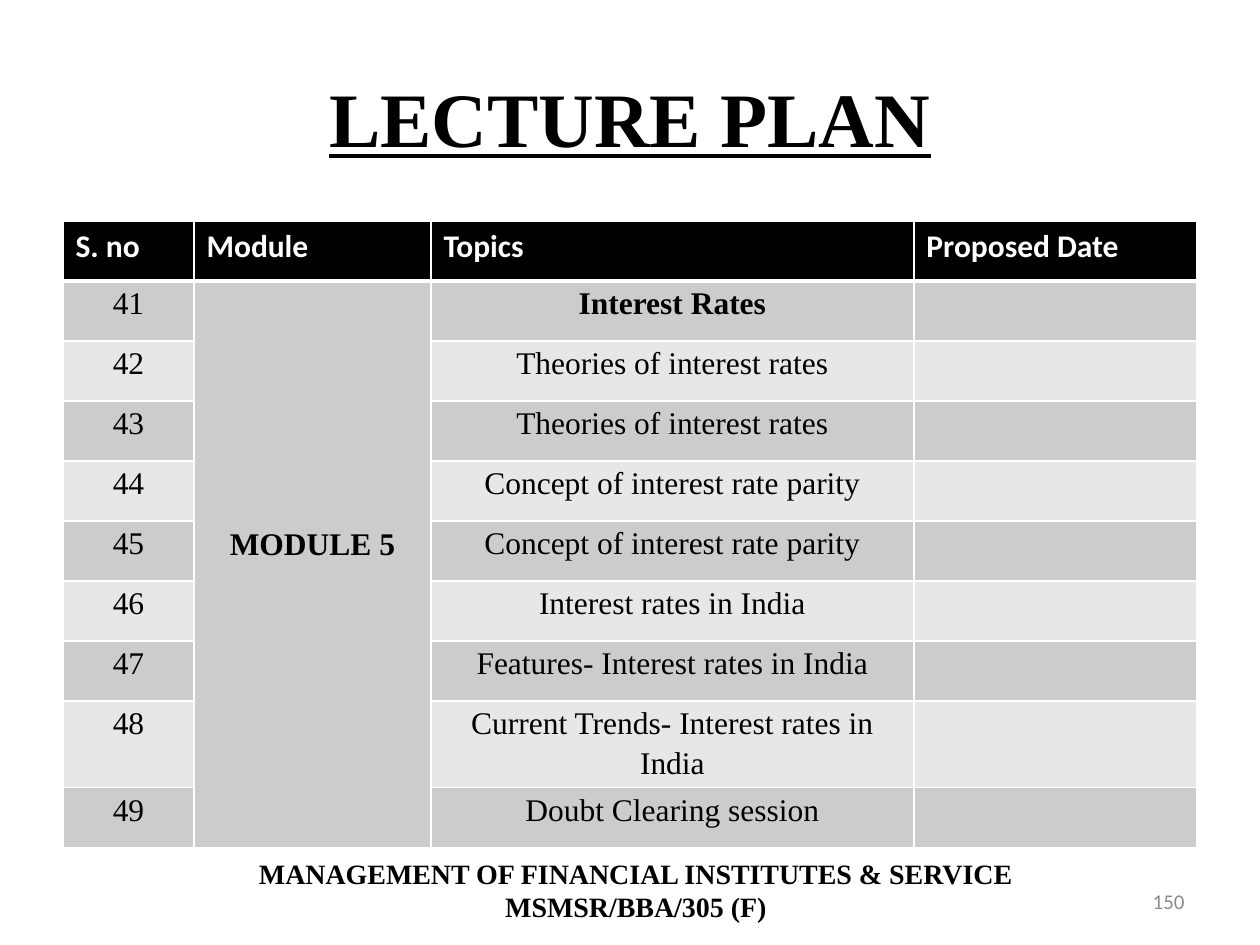
import pptx
import pptx.dml.color
import pptx.enum.text
import pptx.oxml
import pptx.oxml.ns
import pptx.util

PX = 914400 // 126
RGB = pptx.dml.color.RGBColor.from_string
ALIGN = pptx.enum.text.PP_ALIGN
ANCHOR = pptx.enum.text.MSO_ANCHOR

THEME = {
    "serif": "Times New Roman", "sans": "Calibri",
    "ink": "000000", "paper": "FFFFFF", "muted": "8C8C8C",
    "bands": ("CCCCCC", "E7E7E7"),
    "title": 44, "body": 18, "footer": 16, "number": 12,
}


def write(p, text, size, font, color="ink", bold=False):
    """Add one styled run to a paragraph and return it."""
    r = p.add_run()
    r.text = text
    r.font.size = pptx.util.Pt(THEME[size])
    r.font.name = THEME[font]
    r.font.color.rgb = RGB(THEME[color])
    r.font.bold = bold
    return r


def finish_cell(cell, fill, top=1, bottom=1):
    """Draw the cell's borders, widths in points, and fill it."""
    tcPr = cell._tc.get_or_add_tcPr()
    for side, width in (("L", 1), ("R", 1), ("T", top), ("B", bottom)):
        tcPr.append(pptx.oxml.parse_xml(
            f'<a:ln{side} {pptx.oxml.ns.nsdecls("a")} w="{width * 12700}">'
            f'<a:solidFill><a:srgbClr val="{THEME["paper"]}"/></a:solidFill></a:ln{side}>'))
    cell.fill.solid()
    cell.fill.fore_color.rgb = RGB(fill)


prs = pptx.Presentation()
prs.slide_width, prs.slide_height = 1260 * PX, 945 * PX
s = prs.slides.add_slide(prs.slide_layouts[6])

# Text boxes: title, footer, slide number
boxes = [
    ((63, 38, 1134, 157), ANCHOR.MIDDLE, ALIGN.CENTER,
     ["LECTURE PLAN"], ("title", "serif", "ink", True)),
    ((106, 850, 1060, 81), ANCHOR.TOP, ALIGN.CENTER,
     ["MANAGEMENT OF FINANCIAL INSTITUTES & SERVICE", "MSMSR/BBA/305 (F)"],
     ("footer", "serif", "ink", True)),
    ((903, 876, 294, 50), ANCHOR.MIDDLE, ALIGN.RIGHT,
     ["150"], ("number", "sans", "muted")),
]
for place, anchor, align, lines, style in boxes:
    sp = s.shapes.add_textbox(*(v * PX for v in place))
    tf = sp.text_frame
    tf.word_wrap = True
    tf.vertical_anchor = anchor
    p = tf.paragraphs[0]
    p.alignment = align
    for i, line in enumerate(lines):
        if i:
            p.add_line_break()
        r = write(p, line, *style)
        r.font.underline = style[0] == "title"

# Lecture table
headers = ["S. no", "Module", "Topics", "Proposed Date"]
widths = [131, 237, 483, 283]
first_number = 41
topics = [
    "Interest Rates",
    "Theories of interest rates",
    "Theories of interest rates",
    "Concept of interest rate parity",
    "Concept of interest rate parity",
    "Interest rates in India",
    "Features- Interest rates in India",
    "Current Trends- Interest rates in India",
    "Doubt Clearing session",
]
row_height = 60
n_rows = len(topics) + 1
table = s.shapes.add_table(n_rows, len(headers), 63 * PX, 221 * PX,
                           sum(widths) * PX, n_rows * row_height * PX).table
for column, width in zip(table.columns, widths):
    column.width = width * PX
for row in table.rows:
    row.height = row_height * PX

for c, header in enumerate(headers):
    cell = table.cell(0, c)
    write(cell.text_frame.paragraphs[0], header, "body", "sans", "paper", True)
    finish_cell(cell, THEME["ink"], bottom=3)

table.cell(1, 1).merge(table.cell(len(topics), 1))
for i, topic in enumerate(topics):
    module = "MODULE 5" if i == 0 else ""
    for c, text in enumerate([str(first_number + i), module, topic, ""]):
        cell = table.cell(i + 1, c)
        if text:
            cell.margin_left = cell.margin_right = 9 * PX
            cell.margin_top = cell.margin_bottom = 0
            p = cell.text_frame.paragraphs[0]
            p.alignment = ALIGN.CENTER
            p.line_spacing = 1.15
            write(p, text, "body", "serif", bold=i == 0 and c > 0)
        finish_cell(cell, THEME["bands"][0 if c == 1 else i % 2], top=1 if i else 3)

# The module name sits a little above the middle of its merged cell
module_cell = table.cell(1, 1)
module_cell.vertical_anchor = ANCHOR.MIDDLE
module_cell.margin_bottom = 44 * PX

prs.save("out.pptx")
